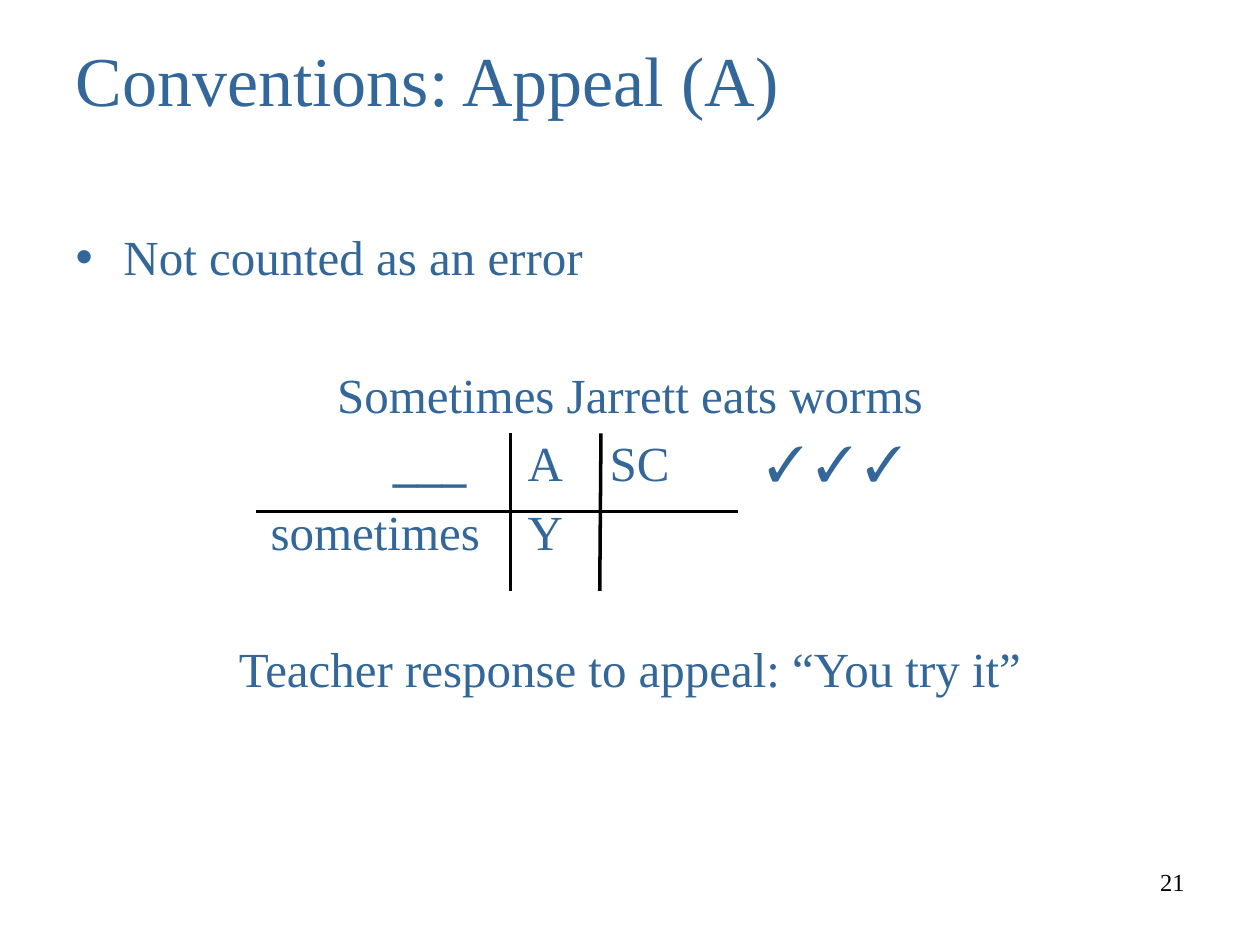
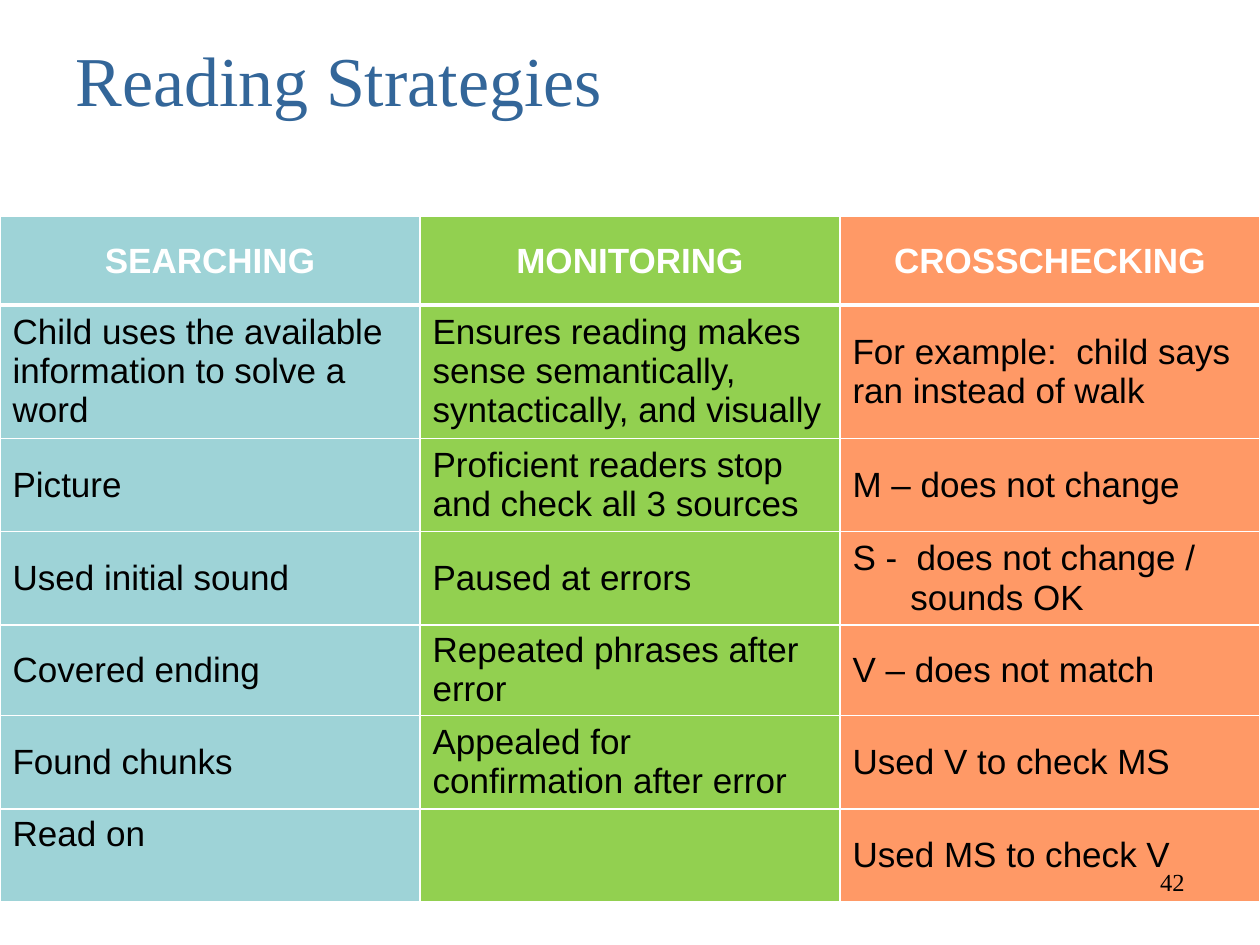
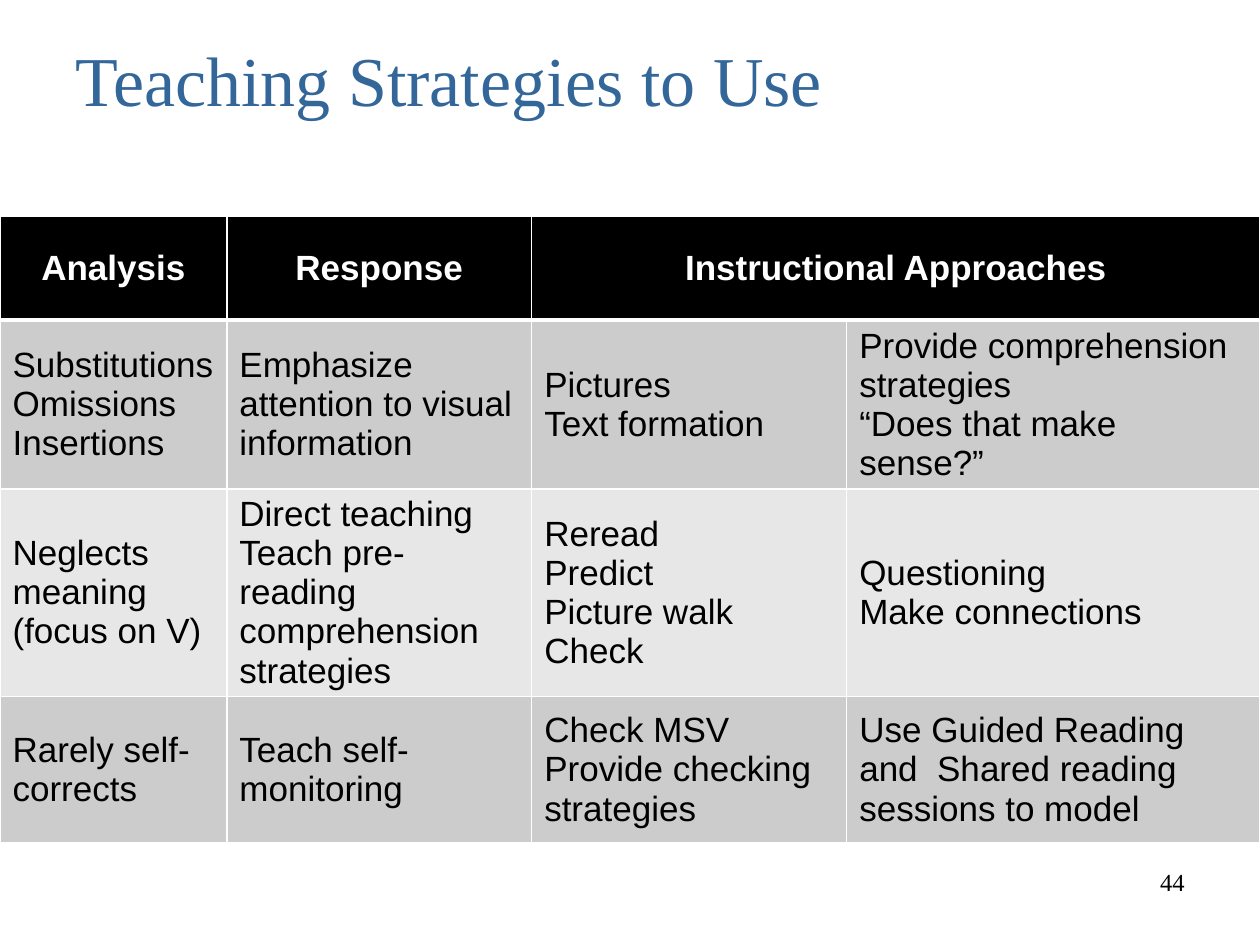
import pptx
import pptx.dml.color
import pptx.enum.shapes
import pptx.enum.text
import pptx.oxml.ns
import pptx.util
from lxml import etree

Inches = pptx.util.Inches
Pt = pptx.util.Pt
ALIGN = pptx.enum.text.PP_ALIGN
ANCHOR = pptx.enum.text.MSO_ANCHOR
NO_AUTO_SIZE = pptx.enum.text.MSO_AUTO_SIZE.NONE
TITLE_AND_CONTENT, TITLE_ONLY = 1, 5


class Theme:
    blue, black, white = "336699", "000000", "FFFFFF"
    teal, green, orange = "9ED3D7", "92D050", "FF9966"
    dark_grey, light_grey = "CCCCCC", "E7E7E7"
    title = {"name": "Times New Roman", "size": Pt(40), "color": blue}
    body = {"name": "Times New Roman", "size": Pt(28), "color": blue}
    number = {"name": "Times New Roman", "size": Pt(14), "color": black}
    header = {"name": "Arial", "size": Pt(20), "color": white, "bold": True}
    cell = {"name": "Arial", "size": Pt(20), "color": black, "bold": False}
    line_width, header_line_width = 1, 3


TITLE_BOX = (0.5, 0, 9, 1.25)
BODY_BOX = (0.5, 1.75, 9, 4.95)
NUMBER_BOX = (7.17, 6.83, 2.33, 0.52)
TABLE_TOP, TABLE_WIDTH = 1.72, 10

# text, bullet, alignment, space before in points
APPEAL = [
    ("Not counted as an error", True, ALIGN.LEFT, 0),
    ("Sometimes Jarrett eats worms", False, ALIGN.CENTER, 45.2),
    ("Teacher response to appeal: “You try it”", False, ALIGN.CENTER, 123),
]
# text, left, top, width, bold
RECORD_MARKS = [
    ("___", 3.02, 3.38, 0.9, True),
    ("A", 4.09, 3.38, 0.6, False),
    ("SC", 4.74, 3.38, 0.8, False),
    ("✓ ✓ ✓", 5.99, 3.38, 1.6, False),
    ("sometimes", 2.05, 3.93, 2, False),
    ("Y", 4.09, 3.93, 0.6, False),
]
MARK_HEIGHT = 0.57
RECORD_LINES = [
    (2.03, 4.06, 5, 4.06),
    (4.05, 3.44, 4.05, 4.69),
    (4.77, 3.44, 4.76, 4.69),
    (5, 4.06, 5.86, 4.06),
]

READING = {
    "columns": [TABLE_WIDTH / 3] * 3,
    "heights": [0.7, 1.06, 0.74, 0.74, 0.72, 0.74, 0.74],
    "rows": [
        ["SEARCHING", "MONITORING", "CROSSCHECKING"],
        ["Child uses the available information to solve a word",
         "Ensures reading makes sense semantically, syntactically, and visually",
         "For example:  child says ran instead of walk"],
        ["Picture", "Proficient readers stop and check all 3 sources",
         "M – does not change"],
        ["Used initial sound", "Paused at errors",
         "S -  does not change /\nsounds OK"],
        ["Covered ending", "Repeated phrases after error", "V – does not match"],
        ["Found chunks", "Appealed for confirmation after error",
         "Used V to check MS"],
        ["Read on", "", "Used MS to check V"],
    ],
}
TEACHING = {
    "columns": [1.8, 2.42, 2.5, 3.28],
    "heights": [0.82, 1.34, 1.65, 1.16],
    "rows": [
        ["Analysis", "Response", "Instructional Approaches", ""],
        ["Substitutions\nOmissions\nInsertions",
         "Emphasize attention to visual information",
         "Pictures\nText formation",
         "Provide comprehension strategies\n“Does that make sense?”"],
        ["Neglects meaning (focus on V)",
         "Direct teaching\nTeach pre-reading comprehension strategies",
         "Reread\nPredict\nPicture walk\nCheck",
         "Questioning\nMake connections"],
        ["Rarely self-corrects", "Teach self-monitoring",
         "Check MSV\nProvide checking strategies",
         "Use Guided Reading and  Shared reading sessions to model"],
    ],
}


def add_element(parent, tag, **attributes):
    element = etree.SubElement(parent, pptx.oxml.ns.qn(tag))
    for name, value in attributes.items():
        element.set(name, str(value))
    return element


def rgb(color):
    return pptx.dml.color.RGBColor.from_string(color)


def apply_format(font, style):
    for name, value in style.items():
        if name == "color":
            font.color.rgb = rgb(value)
        else:
            setattr(font, name, value)


def place(shape, box):
    for name, value in zip(("left", "top", "width", "height"), box):
        setattr(shape, name, Inches(value))


def write(paragraph, text, style, align=ALIGN.LEFT):
    paragraph.alignment = align
    run = paragraph.add_run()
    run.text = text
    apply_format(run.font, style)


def add_slide(presentation, layout, title):
    slide = presentation.slides.add_slide(presentation.slide_layouts[layout])
    place(slide.shapes.title, TITLE_BOX)
    frame = slide.shapes.title.text_frame
    frame.auto_size = NO_AUTO_SIZE
    frame.vertical_anchor = ANCHOR.MIDDLE
    write(frame.paragraphs[0], title, Theme.title)
    return slide


def add_text(slide, box, text, style, align=ALIGN.LEFT):
    frame = slide.shapes.add_textbox(*map(Inches, box)).text_frame
    frame.word_wrap = True
    write(frame.paragraphs[0], text, style, align)


def add_number(slide, number):
    add_text(slide, NUMBER_BOX, str(number), Theme.number, ALIGN.RIGHT)


def set_bullet(paragraph, bullet):
    properties = paragraph._p.get_or_add_pPr()
    indent = Inches(0.38) if bullet else 0
    properties.set("marL", str(indent))
    properties.set("indent", str(-indent))
    if bullet:
        add_element(properties, "a:buChar", char="•")
    else:
        add_element(properties, "a:buNone")


def fill_body(body, items):
    place(body, BODY_BOX)
    frame = body.text_frame
    frame.auto_size = NO_AUTO_SIZE
    for index, (text, bullet, align, before) in enumerate(items):
        paragraph = frame.add_paragraph() if index else frame.paragraphs[0]
        set_bullet(paragraph, bullet)
        paragraph.space_before = Pt(before)
        write(paragraph, text, Theme.body, align)


def add_running_record(slide):
    """Add the marks of the running record and the lines between them."""
    for text, left, top, width, bold in RECORD_MARKS:
        add_text(slide, (left, top, width, MARK_HEIGHT), text,
                 {**Theme.body, "bold": bold})
    group = slide.shapes.add_group_shape()
    for ends in RECORD_LINES:
        line = group.shapes.add_connector(
            pptx.enum.shapes.MSO_CONNECTOR.STRAIGHT, *map(Inches, ends))
        line.line.color.rgb = rgb(Theme.black)
        line.line.width = Pt(2)
        add_element(line._element.spPr, "a:effectLst")


def set_borders(cell, row):
    """Draw white borders, with a thick one under the header row."""
    properties = cell._tc.get_or_add_tcPr()
    thick_side = {0: "a:lnB", 1: "a:lnT"}.get(row)
    for side in ("a:lnL", "a:lnR", "a:lnT", "a:lnB"):
        width = Theme.header_line_width if side == thick_side else Theme.line_width
        line = add_element(properties, side, w=Pt(width))
        add_element(add_element(line, "a:solidFill"), "a:srgbClr", val=Theme.white)


def add_table(slide, content, fill_color):
    """Add a table; fill_color gives the colour for a row and column."""
    rows, columns, heights = content["rows"], content["columns"], content["heights"]
    frame = slide.shapes.add_table(
        len(rows), len(columns), 0, Inches(TABLE_TOP),
        Inches(TABLE_WIDTH), Inches(sum(heights)))
    table = frame.table
    table.horz_banding = False
    for column, width in zip(table.columns, columns):
        column.width = Inches(width)
    for row, height in zip(table.rows, heights):
        row.height = Inches(height)
    for row, texts in enumerate(rows):
        for column, text in enumerate(texts):
            cell = table.cell(row, column)
            set_borders(cell, row)
            cell.fill.solid()
            cell.fill.fore_color.rgb = rgb(fill_color(row, column))
            cell.vertical_anchor = ANCHOR.MIDDLE
            cell.text = text
            for paragraph in cell.text_frame.paragraphs:
                paragraph.alignment = ALIGN.LEFT if row else ALIGN.CENTER
                for run in paragraph.runs:
                    apply_format(run.font, Theme.cell if row else Theme.header)
    return table


def reading_color(row, column):
    return (Theme.teal, Theme.green, Theme.orange)[column]


def teaching_color(row, column):
    if row == 0:
        return Theme.black
    return Theme.dark_grey if row % 2 else Theme.light_grey


def main():
    presentation = pptx.Presentation()
    presentation.slide_width, presentation.slide_height = Inches(10), Inches(7.5)

    slide = add_slide(presentation, TITLE_AND_CONTENT, "Conventions: Appeal (A)")
    fill_body(slide.placeholders[1], APPEAL)
    add_running_record(slide)
    add_number(slide, 21)

    slide = add_slide(presentation, TITLE_ONLY, "Reading Strategies")
    table = add_table(slide, READING, reading_color)
    sounds_ok = table.cell(3, 2).text_frame.paragraphs[1]
    sounds_ok._p.get_or_add_pPr().set("marL", str(Inches(0.46)))
    table.cell(6, 0).vertical_anchor = ANCHOR.TOP
    add_number(slide, 42)

    slide = add_slide(presentation, TITLE_ONLY, "Teaching Strategies to Use")
    table = add_table(slide, TEACHING, teaching_color)
    table.cell(0, 2).merge(table.cell(0, 3))
    add_number(slide, 44)

    presentation.save("out.pptx")


if __name__ == "__main__":
    main()
